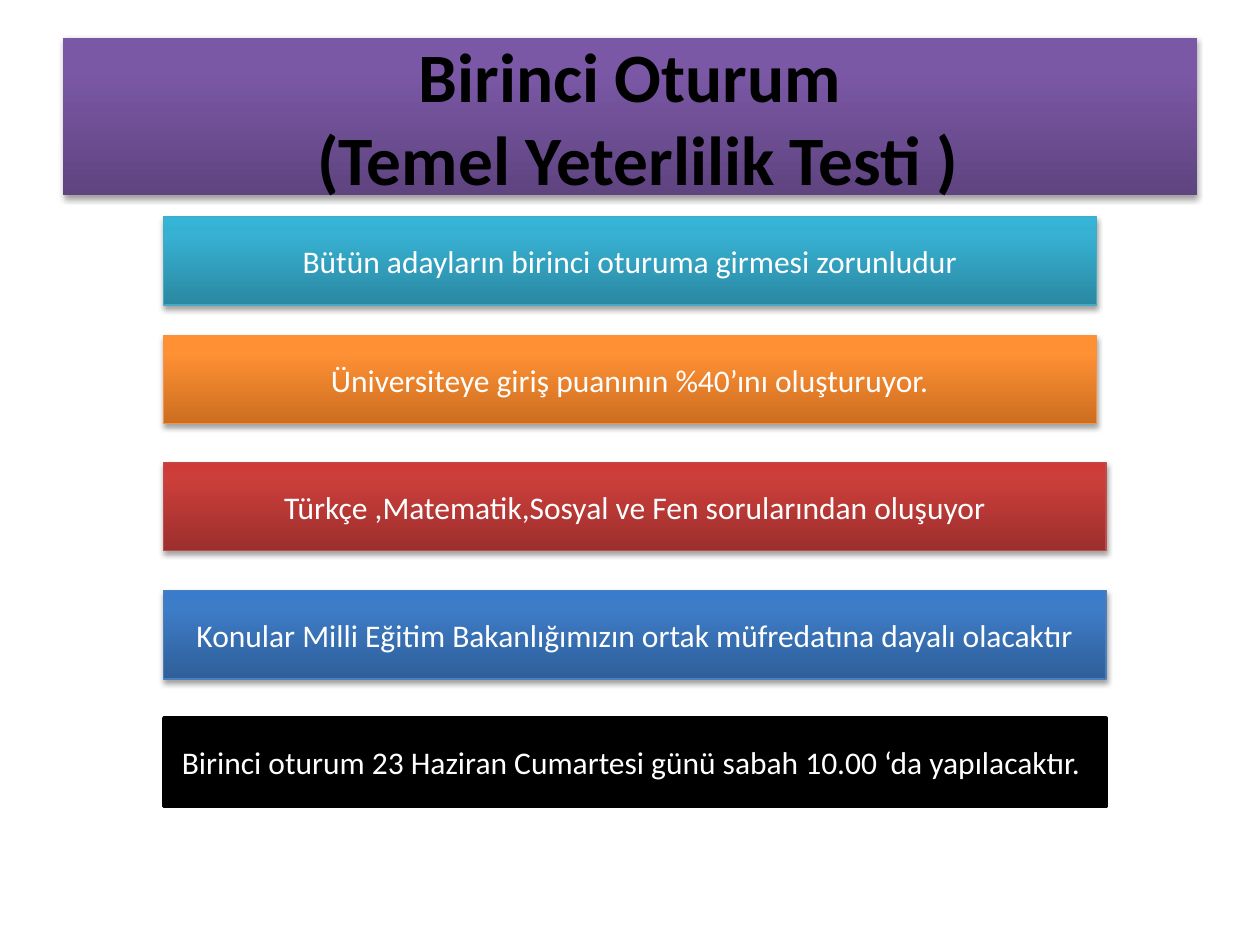
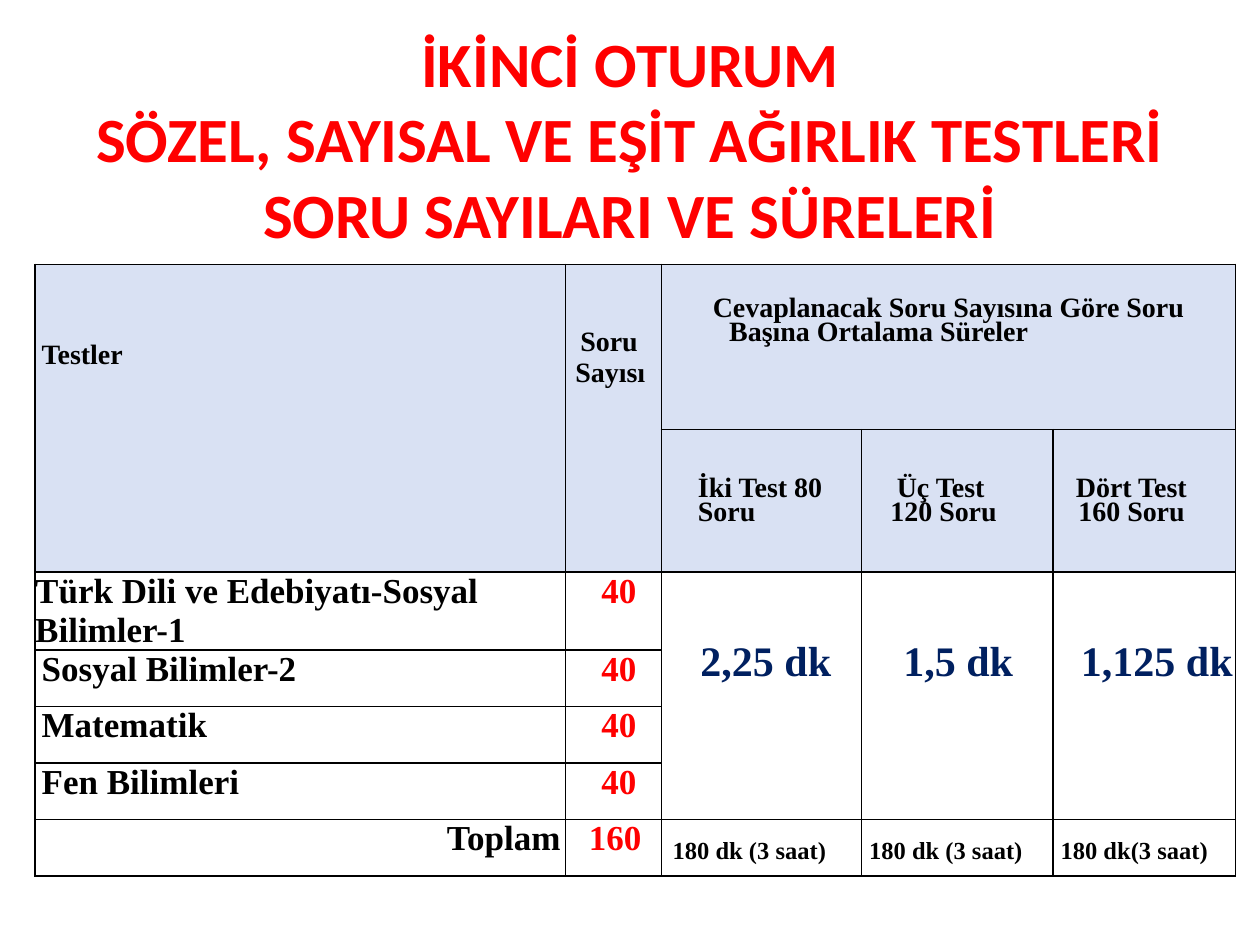
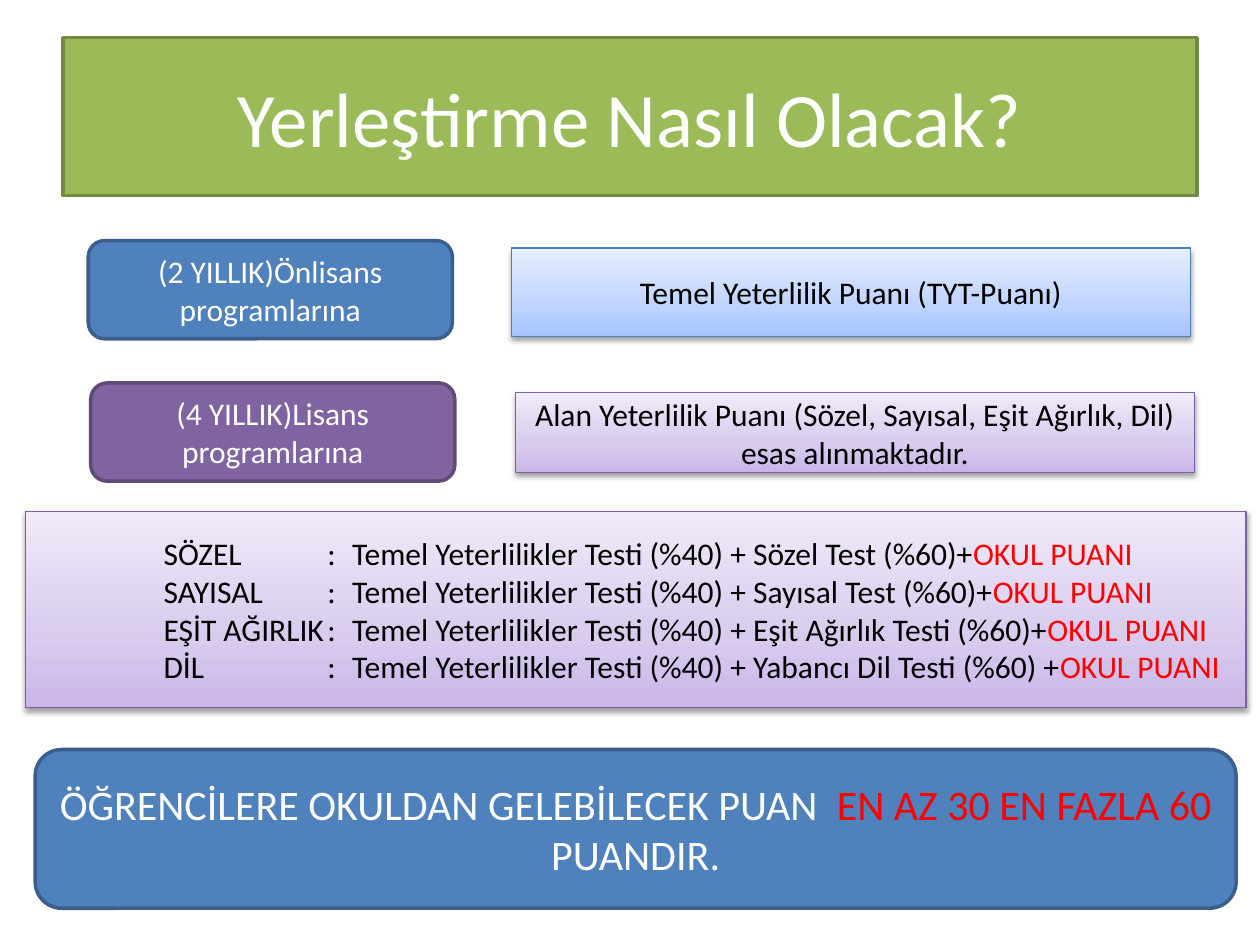
import pptx
import pptx.util
import pptx.dml.color
import pptx.enum.shapes
import pptx.enum.text
import pptx.oxml
import pptx.oxml.ns

Cm = pptx.util.Cm
Pt = pptx.util.Pt
ALIGN = pptx.enum.text.PP_ALIGN
RECT = pptx.enum.shapes.MSO_SHAPE.RECTANGLE
ROUND = pptx.enum.shapes.MSO_SHAPE.ROUNDED_RECTANGLE
NS = pptx.oxml.ns.nsdecls("a")

HUES = {
    "black": "000000", "white": "FFFFFF", "red": "FF0000", "navy": "002060",
    "head": "D9E1F3", "green": "9BBB59", "moss": "738A42",
    "blue": "4F81BD", "deep": "3A5F8C", "plum": "8064A2", "dusk": "5F4A78",
    "aqua edge": "46AAC5", "orange edge": "F69240", "red edge": "BF4C48",
    "blue edge": "4B7EBC", "plum edge": "7D60A0",
}

# Gradient stops run from the bottom edge to the top edge.
FADES = {
    "plum fade": ((0, "5F4480"), (80, "7B58A6"), (100, "7C57A8")),
    "aqua fade": ((0, "2A88A2"), (80, "37B1D2"), (100, "34B4D6")),
    "orange fade": ((0, "CC6E20"), (80, "FF9034"), (100, "FF9136")),
    "red fade": ((0, "9C2F2D"), (80, "CB3E3A"), (100, "CE3B37")),
    "blue fade": ((0, "2F5F99"), (80, "3D7CC7"), (100, "3A7CCB")),
    "sky": ((0, "A4C4FF"), (35, "BFD4FF"), (100, "E6EEFF")),
    "lilac": ((0, "C9B5E8"), (35, "D8CBEE"), (100, "F0EAF9")),
}

BAND = (1.27, 0.76, 22.86, 3.18)
FRAME = {
    "word_wrap": True,
    "auto_size": pptx.enum.text.MSO_AUTO_SIZE.NONE,
    "vertical_anchor": pptx.enum.text.MSO_ANCHOR.MIDDLE,
}


def tint(name):
    return pptx.dml.color.RGBColor.from_string(HUES[name])


def place(item, box):
    for key, size in zip(("left", "top", "width", "height"), box):
        setattr(item, key, Cm(size))


def add_run(para, text, hue, size, bold=False, face="Calibri"):
    run = para.add_run()
    run.text = text
    look = {"name": face, "size": Pt(size), "bold": bold}
    for key, value in look.items():
        setattr(run.font, key, value)
    run.font.color.rgb = tint(hue)


def write(item, runs, size, bold=False):
    """Fill a shape with one centred paragraph of (text, colour) runs."""
    frame = item.text_frame
    for key, value in FRAME.items():
        setattr(frame, key, value)
    para = frame.paragraphs[0]
    para.alignment = ALIGN.CENTER
    for text, hue in runs:
        for part, line in enumerate(text.split("\n")):
            if part:
                para.add_line_break()
            add_run(para, line, hue, size, bold)


def fade(item, name):
    """Paint a vertical gradient and a soft shadow below the shape."""
    stops = "".join(
        f'<a:gs pos="{spot * 1000}"><a:srgbClr val="{hue}"/></a:gs>'
        for spot, hue in FADES[name])
    item.fill.background()
    props = item._element.spPr
    blank = props.find(pptx.oxml.ns.qn("a:noFill"))
    props.replace(blank, pptx.oxml.parse_xml(
        f'<a:gradFill {NS} rotWithShape="1"><a:gsLst>{stops}</a:gsLst>'
        '<a:lin ang="16200000" scaled="0"/></a:gradFill>'))
    glow = props.find(pptx.oxml.ns.qn("a:effectLst"))
    glow.append(pptx.oxml.parse_xml(
        f'<a:outerShdw {NS} blurRad="{Pt(3.1)}" dist="{Pt(1.8)}" '
        'dir="5400000" rotWithShape="0"><a:srgbClr val="000000">'
        '<a:alpha val="36000"/></a:srgbClr></a:outerShdw>'))


def paint(item, fill, edge=None):
    item.shadow.inherit = False
    if edge:
        item.line.color.rgb = tint(edge)
        item.line.width = Pt(0.75 if fill in FADES else 2)
    if fill in FADES:
        fade(item, fill)
    else:
        item.fill.solid()
        item.fill.fore_color.rgb = tint(fill)


def add_title(page, box, text, hue, size, bold=False):
    title = page.shapes.title
    place(title, box)
    write(title, [(text, hue)], size, bold)
    return title


def add_box(page, form, box, fill, edge, runs=(), size=18):
    item = page.shapes.add_shape(form, *map(Cm, box))
    paint(item, fill, edge)
    write(item, runs, size)
    return item


def first(page):
    title = add_title(page, BAND, "Birinci Oturum\n (Temel Yeterlilik Testi )",
                      "black", 39.6, True)
    paint(title, "plum fade")
    bars = (
        (4.37, 18.8, "aqua fade", "aqua edge",
         "Bütün adayların birinci oturuma girmesi zorunludur"),
        (6.76, 18.8, "orange fade", "orange edge",
         "Üniversiteye giriş puanının %40’ını oluşturuyor."),
        (9.32, 19, "red fade", "red edge",
         "Türkçe ,Matematik,Sosyal ve Fen sorularından oluşuyor"),
        (11.91, 19, "blue fade", "blue edge",
         "Konular Milli Eğitim Bakanlığımızın ortak müfredatına dayalı olacaktır"),
        (14.48, 19, "black", "black",
         "Birinci oturum 23 Haziran Cumartesi günü sabah 10.00 ‘da yapılacaktır. "),
    )
    for top, wide, fill, edge, text in bars:
        add_box(page, RECT, (3.3, top, wide, 1.78), fill, edge,
                [(text, "white")])


def rule(cell):
    """Draw a thin black border on the four sides of a cell."""
    props = cell._tc.get_or_add_tcPr()
    for spot, side in enumerate(("lnL", "lnR", "lnT", "lnB")):
        props.insert(spot, pptx.oxml.parse_xml(
            f'<a:{side} {NS} w="{Pt(1)}"><a:solidFill>'
            f'<a:srgbClr val="{HUES["black"]}"/></a:solidFill></a:{side}>'))


def fill_cell(cell, text, size, hue="black", left=0, top=0, right=0,
              shift=0, lead=None, align=ALIGN.LEFT):
    """Write a cell; shift indents its first line, lead is its line pitch."""
    edges = {"margin_left": 0, "margin_top": top, "margin_right": right,
             "margin_bottom": 0}
    for key, value in edges.items():
        setattr(cell, key, Cm(value))
    para = cell.text_frame.paragraphs[0]
    para.alignment = align
    if lead:
        para.line_spacing = Pt(lead)
    props = para._p.get_or_add_pPr()
    props.set("marL", str(Cm(left)))
    props.set("indent", str(Cm(shift)))
    add_run(para, text, hue, size, True, "Times New Roman")


def add_grid(page):
    wides = (10.69, 1.93, 4.04, 3.86, 3.68)
    highs = (3.33, 2.87, 1.57) + (1.14,) * 4
    grid = page.shapes.add_table(
        len(highs), len(wides), Cm(0.71), Cm(5.33),
        Cm(sum(wides)), Cm(sum(highs))).table
    grid.first_row = grid.horz_banding = False
    for col, wide in zip(grid.columns, wides):
        col.width = Cm(wide)
    for row, high in zip(grid.rows, highs):
        row.height = Cm(high)
    for row in range(len(highs)):
        for col in range(len(wides)):
            cell = grid.cell(row, col)
            if row < 2:
                cell.fill.solid()
                cell.fill.fore_color.rgb = tint("head")
            else:
                cell.fill.background()
            rule(cell)
    spans = [(0, 0, 1, 0), (0, 1, 1, 1), (0, 2, 0, 4)]
    spans += [(2, col, 5, col) for col in (2, 3, 4)]
    for top, left, low, right in spans:
        grid.cell(top, left).merge(grid.cell(low, right))
    return grid


def second(page):
    add_title(page, (1.27, 0.33, 22.86, 4.88),
              "İKİNCİ OTURUM\nSÖZEL, SAYISAL VE EŞİT AĞIRLIK TESTLERİ "
              "SORU SAYILARI VE SÜRELERİ", "red", 36, True)
    grid = add_grid(page)
    fill_cell(grid.cell(0, 0), "Testler", 16, left=0.13, top=1.51)
    fill_cell(grid.cell(0, 1), "Soru Sayısı", 16, left=0.2, top=1.25,
              shift=0.1)
    fill_cell(grid.cell(0, 2),
              "Cevaplanacak Soru Sayısına Göre Soru Başına Ortalama Süreler",
              16, left=1.37, top=0.72, shift=-0.33, lead=13.5)

    plans = (
        ("İki Test 80 Soru", 0.74, 0, "2,25 dk", 0.79, "180 dk (3 saat)", 0.23),
        ("Üç Test 120 Soru", 0.58, 0.13, "1,5 dk", 0.84, "180 dk (3 saat)", 0.15),
        ("Dört Test 160 Soru", 0.51, -0.05, "1,125 dk", 0.56, "180 dk(3 saat)", 0.15),
    )
    for col, (name, left, shift, pace, inset, total, pad) in enumerate(plans, 2):
        fill_cell(grid.cell(1, col), name, 16, left=left, top=1.02, right=0.6,
                  shift=shift, lead=13.5)
        fill_cell(grid.cell(2, col), pace, 24, "navy", inset, 1.35)
        fill_cell(grid.cell(6, col), total, 14, left=pad, top=0.5, lead=11.7)

    tests = (
        ("Türk Dili ve Edebiyatı-Sosyal Bilimler-1", 0),
        ("Sosyal Bilimler-2", 0.13),
        ("Matematik", 0.13),
        ("Fen Bilimleri", 0.13),
    )
    for row, (name, left) in enumerate(tests, 2):
        fill_cell(grid.cell(row, 0), name, 20, left=left)
        fill_cell(grid.cell(row, 1), "40", 20, "red", right=0.5,
                  align=ALIGN.RIGHT)
    fill_cell(grid.cell(6, 0), "Toplam", 20, right=0.1, align=ALIGN.RIGHT)
    fill_cell(grid.cell(6, 1), "160", 20, "red", right=0.4, align=ALIGN.RIGHT)


def add_sums(page):
    """List how each score type is made up, in tabbed columns."""
    item = add_box(page, RECT, (0.51, 10.31, 24.61, 3.96), "lilac", "plum edge")
    frame = item.text_frame
    frame.margin_left = Cm(2.79)
    sums = (
        ("SÖZEL", "Sözel Test (%60)+"),
        ("SAYISAL", "Sayısal Test (%60)+"),
        ("EŞİT AĞIRLIK", "Eşit Ağırlık Testi (%60)+"),
        ("DİL", "Yabancı Dil Testi (%60) +"),
    )
    stops = "".join(f'<a:tab pos="{Cm(spot)}" algn="l"/>'
                    for spot in (3.3, 3.8))
    for row, (kind, test) in enumerate(sums):
        para = frame.add_paragraph() if row else frame.paragraphs[0]
        para.alignment = ALIGN.LEFT
        para._p.get_or_add_pPr().append(
            pptx.oxml.parse_xml(f"<a:tabLst {NS}>{stops}</a:tabLst>"))
        add_run(para, f"{kind}\t:\tTemel Yeterlilikler Testi (%40) + {test}",
                "black", 18)
        add_run(para, "OKUL PUANI", "red", 18)


def third(page):
    title = add_title(page, BAND, "Yerleştirme Nasıl Olacak?", "white", 44)
    paint(title, "green", "moss")
    add_box(page, ROUND, (1.78, 4.85, 7.34, 1.98), "blue", "deep",
            [("(2 YILLIK)Önlisans programlarına", "white")])
    add_box(page, RECT, (10.31, 5, 13.69, 1.78), "sky", "blue edge",
            [("Temel Yeterlilik Puanı (TYT-Puanı)", "black")])
    add_box(page, ROUND, (1.83, 7.72, 7.34, 1.98), "plum", "dusk",
            [("(4 YILLIK)Lisans programlarına", "white")])
    add_box(page, RECT, (10.39, 7.92, 13.69, 1.6), "lilac", "plum edge",
            [("Alan Yeterlilik Puanı (Sözel, Sayısal, Eşit Ağırlık, Dil) "
              "esas alınmaktadır.", "black")])
    add_sums(page)
    add_box(page, ROUND, (0.71, 15.11, 24.21, 3.2), "blue", "deep",
            [("ÖĞRENCİLERE OKULDAN GELEBİLECEK PUAN  ", "white"),
             ("EN AZ 30 EN FAZLA 60 ", "red"), ("PUANDIR.", "white")], 24)


def main():
    deck = pptx.Presentation()
    deck.slide_width, deck.slide_height = Cm(25.4), Cm(19.05)
    for build in (first, second, third):
        build(deck.slides.add_slide(deck.slide_layouts[5]))
    deck.save("out.pptx")


if __name__ == "__main__":
    main()
